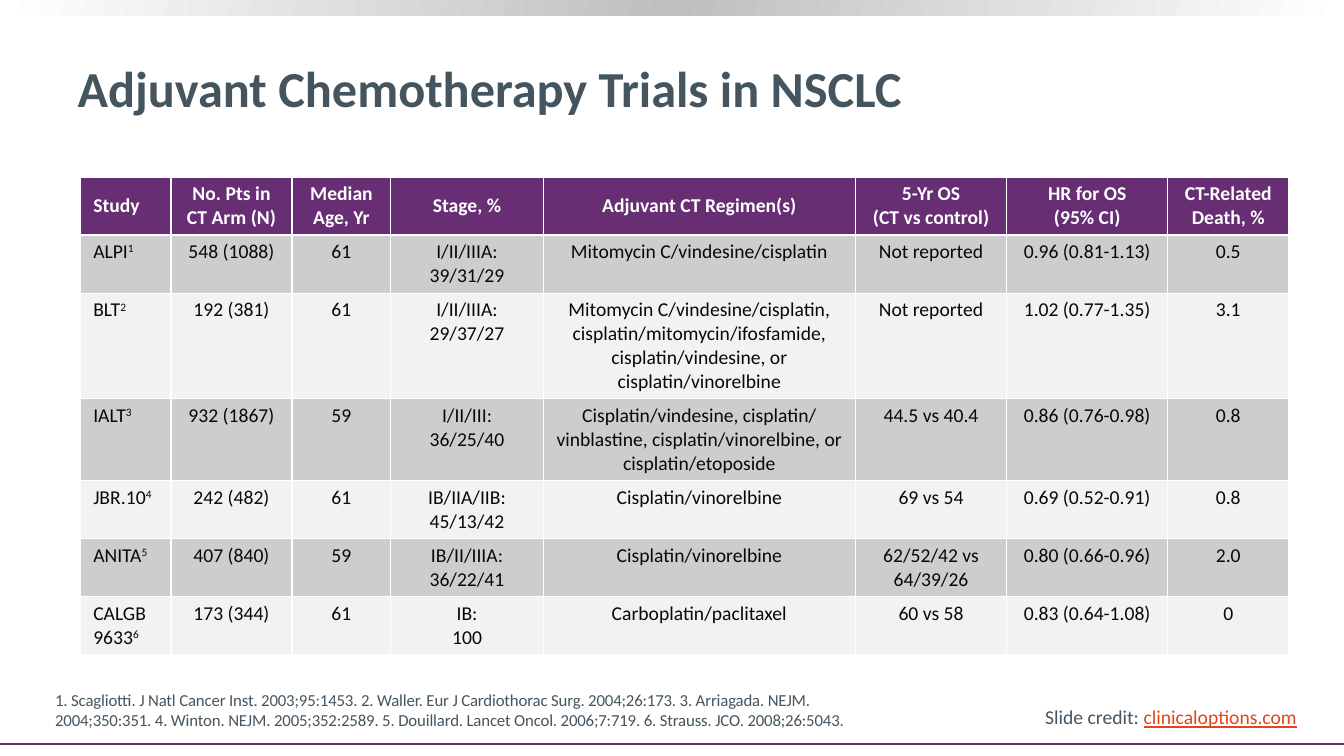
import copy
from dataclasses import dataclass

import pptx
import pptx.dml.color
import pptx.enum.shapes
import pptx.enum.text
import pptx.oxml
import pptx.oxml.ns
import pptx.util
from pptx.util import Cm

RGBColor = pptx.dml.color.RGBColor
PP_ALIGN = pptx.enum.text.PP_ALIGN
MSO_ANCHOR = pptx.enum.text.MSO_ANCHOR
MSO_AUTO_SIZE = pptx.enum.text.MSO_AUTO_SIZE

WHITE = RGBColor(0xFF, 0xFF, 0xFF)
SILVER = RGBColor(0xBF, 0xBF, 0xBF)
PURPLE = RGBColor(0x68, 0x2E, 0x74)
SLATE = RGBColor(0x45, 0x55, 0x60)
INK = RGBColor(0x07, 0x08, 0x0A)
ORANGE = RGBColor(0xE1, 0x47, 0x1D)
BAND_DARK = RGBColor(0xCD, 0xCD, 0xCF)
BAND_LIGHT = RGBColor(0xF2, 0xF2, 0xF2)

FONT = "Calibri"
SLIDE_W, SLIDE_H = Cm(33.87), Cm(19.05)
LINE_CM, ROW_PADDING_CM = 0.6, 0.26


@dataclass
class Column:
    heading: str
    width: float


@dataclass
class Trial:
    study: str
    patients: str
    age: str
    stage: str
    regimen: str
    survival: str
    hazard: str
    deaths: str
    lines: int = 2


COLUMNS = [
    Column("Study", 2.29),
    Column("No. Pts in CT Arm (N)", 3.05),
    Column("Median Age, Yr", 2.49),
    Column("Stage, %", 3.84),
    Column("Adjuvant CT Regimen(s)", 7.87),
    Column("5-Yr OS\n(CT vs control)", 3.81),
    Column("HR for OS\n(95% CI)", 4.06),
    Column("CT-Related Death, %", 3.05),
]

TRIALS = [
    Trial("ALPI", "548 (1088)", "61", "I/II/IIIA: 39/31/29",
          "Mitomycin C/vindesine/cisplatin", "Not reported", "0.96 (0.81-1.13)", "0.5"),
    Trial("BLT", "192 (381)", "61", "I/II/IIIA: 29/37/27",
          "Mitomycin C/vindesine/cisplatin, cisplatin/mitomycin/ifosfamide, "
          "cisplatin/vindesine, or cisplatin/vinorelbine",
          "Not reported", "1.02 (0.77-1.35)", "3.1", lines=4),
    Trial("IALT", "932 (1867)", "59", "I/II/III: 36/25/40",
          "Cisplatin/vindesine, cisplatin/ vinblastine, cisplatin/vinorelbine, "
          "or cisplatin/etoposide",
          "44.5 vs 40.4", "0.86 (0.76-0.98)", "0.8", lines=3),
    Trial("JBR.10", "242 (482)", "61", "IB/IIA/IIB: 45/13/42",
          "Cisplatin/vinorelbine", "69 vs 54", "0.69 (0.52-0.91)", "0.8"),
    Trial("ANITA", "407 (840)", "59", "IB/II/IIIA: 36/22/41",
          "Cisplatin/vinorelbine", "62/52/42 vs 64/39/26", "0.80 (0.66-0.96)", "2.0"),
    Trial("CALGB 9633", "173 (344)", "61", "IB:\n100",
          "Carboplatin/paclitaxel", "60 vs 58", "0.83 (0.64-1.08)", "0"),
]

REFERENCES = (
    "1. Scagliotti. J Natl Cancer Inst. 2003;95:1453. 2. Waller. Eur J Cardiothorac Surg. "
    "2004;26:173. 3. Arriagada. NEJM. 2004;350:351. 4. Winton. NEJM. 2005;352:2589. "
    "5. Douillard. Lancet Oncol. 2006;7:719. 6. Strauss. JCO. 2008;26:5043."
)


def add_run(p, text: str, size: float, color: RGBColor, bold: bool = False):
    r = p.add_run()
    r.text = text
    r.font.name = FONT
    r.font.size = pptx.util.Pt(size)
    r.font.bold = bold
    r.font.color.rgb = color
    return r


def row_height(lines: int) -> int:
    return Cm(lines * LINE_CM + ROW_PADDING_CM)


def fill_cell(cell, text: str, fill: RGBColor, color: RGBColor, centred: bool,
              bold: bool = False):
    """Style a cell, write one paragraph per line and return the last one."""
    cell.fill.solid()
    cell.fill.fore_color.rgb = fill
    cell.margin_left = cell.margin_right = Cm(0.33)
    cell.margin_top = cell.margin_bottom = Cm(0.13)
    cell.vertical_anchor = MSO_ANCHOR.MIDDLE if bold else MSO_ANCHOR.TOP
    tf = cell.text_frame
    for i, line in enumerate(text.split("\n")):
        p = tf.add_paragraph() if i else tf.paragraphs[0]
        p.alignment = PP_ALIGN.CENTER if centred else PP_ALIGN.LEFT
        add_run(p, line, 14, color, bold)
    return p


def add_frame(s) -> None:
    """Gradient band at the top and rule at the bottom."""
    band = s.shapes.add_shape(pptx.enum.shapes.MSO_SHAPE.RECTANGLE, 0, 0, SLIDE_W, Cm(0.4))
    band.shadow.inherit = False
    band.line.fill.background()
    band.fill.gradient()
    band.fill.gradient_angle = 170
    for stop in band.fill.gradient_stops:
        stop.color.rgb = WHITE
    stops = band.element.spPr.find(".//" + pptx.oxml.ns.qn("a:gsLst"))
    stops.insert(1, copy.deepcopy(stops[0]))
    middle = band.fill.gradient_stops[1]
    middle.position = 0.5
    middle.color.rgb = SILVER

    rule = s.shapes.add_connector(pptx.enum.shapes.MSO_CONNECTOR.STRAIGHT,
                                  0, Cm(18.75), SLIDE_W, Cm(18.75))
    rule.line.color.rgb = PURPLE
    rule.line.width = pptx.util.Pt(1.5)
    rule.element.spPr.append(pptx.oxml.parse_xml(
        f"<a:effectLst {pptx.oxml.ns.nsdecls('a')}/>"))


def add_title(s, text: str) -> None:
    sp = s.shapes.title
    sp.left, sp.top, sp.width, sp.height = Cm(1.7), Cm(0.66), Cm(30.2), Cm(3.07)
    tf = sp.text_frame
    tf.auto_size = MSO_AUTO_SIZE.NONE
    tf.vertical_anchor = MSO_ANCHOR.MIDDLE
    p = tf.paragraphs[0]
    p.alignment = PP_ALIGN.LEFT
    add_run(p, text, 36, SLATE, bold=True)


def add_trials(s) -> None:
    line_counts = [2] + [trial.lines for trial in TRIALS]
    width = Cm(sum(column.width for column in COLUMNS))
    height = sum(row_height(n) for n in line_counts)
    table = s.shapes.add_table(len(line_counts), len(COLUMNS),
                               Cm(2.02), Cm(4.46), width, height).table
    for row, lines in zip(table.rows, line_counts):
        row.height = row_height(lines)
    for c, column in enumerate(COLUMNS):
        table.columns[c].width = Cm(column.width)
        fill_cell(table.cell(0, c), column.heading, PURPLE, WHITE, c > 0, bold=True)
    for n, t in enumerate(TRIALS, start=1):
        values = [t.study, t.patients, t.age, t.stage, t.regimen, t.survival, t.hazard, t.deaths]
        for c, value in enumerate(values):
            p = fill_cell(table.cell(n, c), value, BAND_DARK if n % 2 else BAND_LIGHT, INK, c > 0)
            if c == 0:
                mark = add_run(p, str(n), 14, INK)
                mark.font._element.set("baseline", "30000")


def add_textbox(s, left: float, top: float, width: float, height: float, wrap: bool):
    tf = s.shapes.add_textbox(Cm(left), Cm(top), Cm(width), Cm(height)).text_frame
    tf.word_wrap = wrap
    return tf


def main() -> None:
    prs = pptx.Presentation()
    prs.slide_width, prs.slide_height = SLIDE_W, SLIDE_H
    s = prs.slides.add_slide(prs.slide_layouts[5])
    add_frame(s)
    add_title(s, "Adjuvant Chemotherapy Trials in NSCLC")
    add_trials(s)

    # References
    tf = add_textbox(s, 1.14, 17.25, 21.82, 1.27, wrap=True)
    tf.vertical_anchor = MSO_ANCHOR.BOTTOM
    r = add_run(tf.paragraphs[0], REFERENCES, 12, SLATE)
    r.font._element.set("spc", "-10")

    # Slide credit
    p = add_textbox(s, 26.09, 17.65, 6.91, 0.86, wrap=False).paragraphs[0]
    add_run(p, "Slide credit: ", 14, SLATE)
    add_run(p, "clinicaloptions.com", 14, ORANGE).font.underline = True

    prs.save("out.pptx")


if __name__ == "__main__":
    main()
